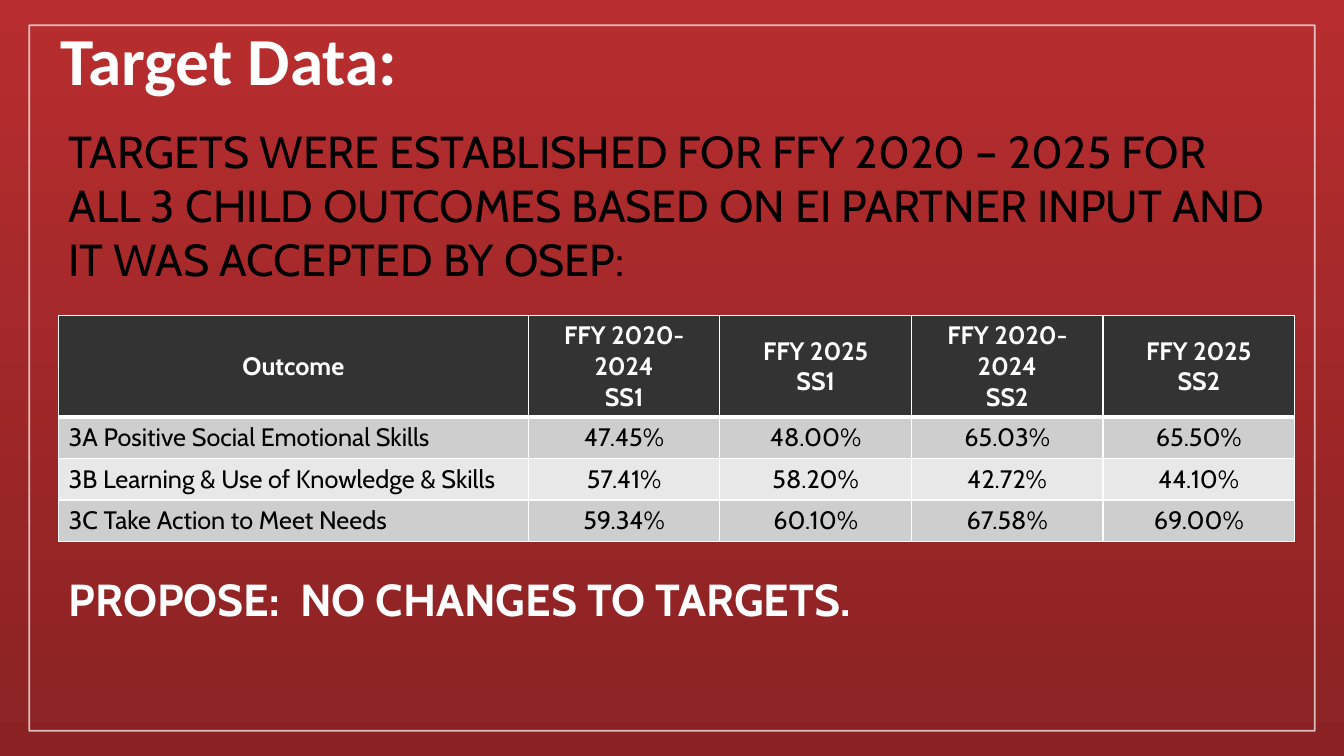
from pptx import Presentation
from pptx.dml.color import RGBColor
from pptx.enum.shapes import MSO_SHAPE
from pptx.enum.text import MSO_ANCHOR as ANCHOR, PP_ALIGN as ALIGN
from pptx.oxml import parse_xml
from pptx.oxml.ns import nsdecls
from pptx.util import Inches, Pt

COLORS = {"top": "B82D2F", "bottom": "8A2223", "white": "FFFFFF", "black": "000000",
          "header": "333333", "odd": "CECECE", "even": "E8E8E8"}


def style_text(p, size, color, bold=False, font="Cabin"):
    for r in p.runs:
        r.font.name, r.font.size, r.font.bold = font, Pt(size), bold
        r.font.color.rgb = RGBColor.from_string(COLORS[color])


def add_border(cell, side, width):
    cell._tc.get_or_add_tcPr().append(parse_xml(
        f'<a:{side} {nsdecls("a")} w="{Pt(width)}"><a:solidFill>'
        f'<a:srgbClr val="{COLORS["white"]}"/></a:solidFill></a:{side}>'))


prs = Presentation()
prs.slide_width, prs.slide_height = Inches(13.33), Inches(7.5)
s = prs.slides.add_slide(prs.slide_layouts[6])

# Background, darker towards the bottom
fill = s.background.fill
fill.gradient()
fill.gradient_angle = 270
for stop, name, position in zip(fill.gradient_stops, ("top", "bottom"), (0, 1)):
    stop.color.rgb = RGBColor.from_string(COLORS[name])
    stop.position = position

# Frame
frame = s.shapes.add_shape(MSO_SHAPE.RECTANGLE, Inches(0.29), Inches(0.25),
                           Inches(12.75), Inches(7))
frame.shadow.inherit = False
frame.fill.background()
frame.line.width = Pt(1.25)
frame.line.color.rgb = RGBColor.from_string(COLORS["white"])
line_color = frame.line._ln.find(".//{*}srgbClr")
line_color.append(parse_xml(f'<a:alpha {nsdecls("a")} val="70000"/>'))

# Title, introduction and proposal
texts = [
    ("Target Data:", 0.5, 0.28, 0.75, 48, "white", True, "Calibri", ANCHOR.BOTTOM, 0.8),
    ("TARGETS WERE ESTABLISHED FOR FFY 2020 – 2025 FOR ALL 3 CHILD OUTCOMES "
     "BASED ON EI PARTNER INPUT AND IT WAS ACCEPTED BY OSEP:",
     0.58, 1.18, 1.75, 32, "black", False, "Cabin", ANCHOR.TOP, 1.0),
    ("PROPOSE:  NO CHANGES TO TARGETS.",
     0.58, 5.62, 0.7, 32, "white", True, "Cabin", ANCHOR.TOP, 1.0),
]
for text, left, top, height, size, color, bold, font, anchor, spacing in texts:
    tf = s.shapes.add_textbox(Inches(left), Inches(top), Inches(12.25),
                              Inches(height)).text_frame
    tf.word_wrap = True
    tf.vertical_anchor = anchor
    tf.text = text
    p = tf.paragraphs[0]
    p.line_spacing = spacing
    style_text(p, size, color, bold, font)

# Targets table
rows = [
    ["Outcome", "FFY 2020-2024\nSS1", "FFY 2025\nSS1", "FFY 2020-2024\nSS2", "FFY 2025\nSS2"],
    ["3A Positive Social Emotional Skills", "47.45%", "48.00%", "65.03%", "65.50%"],
    ["3B Learning & Use of Knowledge & Skills", "57.41%", "58.20%", "42.72%", "44.10%"],
    ["3C Take Action to Meet Needs", "59.34%", "60.10%", "67.58%", "69.00%"],
]
row_fills = ["header", "odd", "even", "odd"]
table = s.shapes.add_table(len(rows), len(rows[0]), Inches(0.58), Inches(3.13),
                           Inches(12.25), Inches(2.23)).table
for i, column in enumerate(table.columns):
    column.width = Inches(1.9 if i else 4.66)
for i, row in enumerate(table.rows):
    row.height = Inches(0.41 if i else 1.01)

for i, values in enumerate(rows):
    is_header = i == 0
    for j, value in enumerate(values):
        cell = table.cell(i, j)
        cell.text_frame.text = value
        cell.vertical_anchor = ANCHOR.MIDDLE
        for p in cell.text_frame.paragraphs:
            p.alignment = ALIGN.CENTER if is_header or j else ALIGN.LEFT
            style_text(p, 18, "white" if is_header else "black", is_header)
        for side in ("lnL", "lnR", "lnT", "lnB"):
            heavy = (is_header and side == "lnB") or (i == 1 and side == "lnT")
            add_border(cell, side, 3 if heavy else 1)
        cell.fill.solid()
        cell.fill.fore_color.rgb = RGBColor.from_string(COLORS[row_fills[i]])

prs.save("out.pptx")
